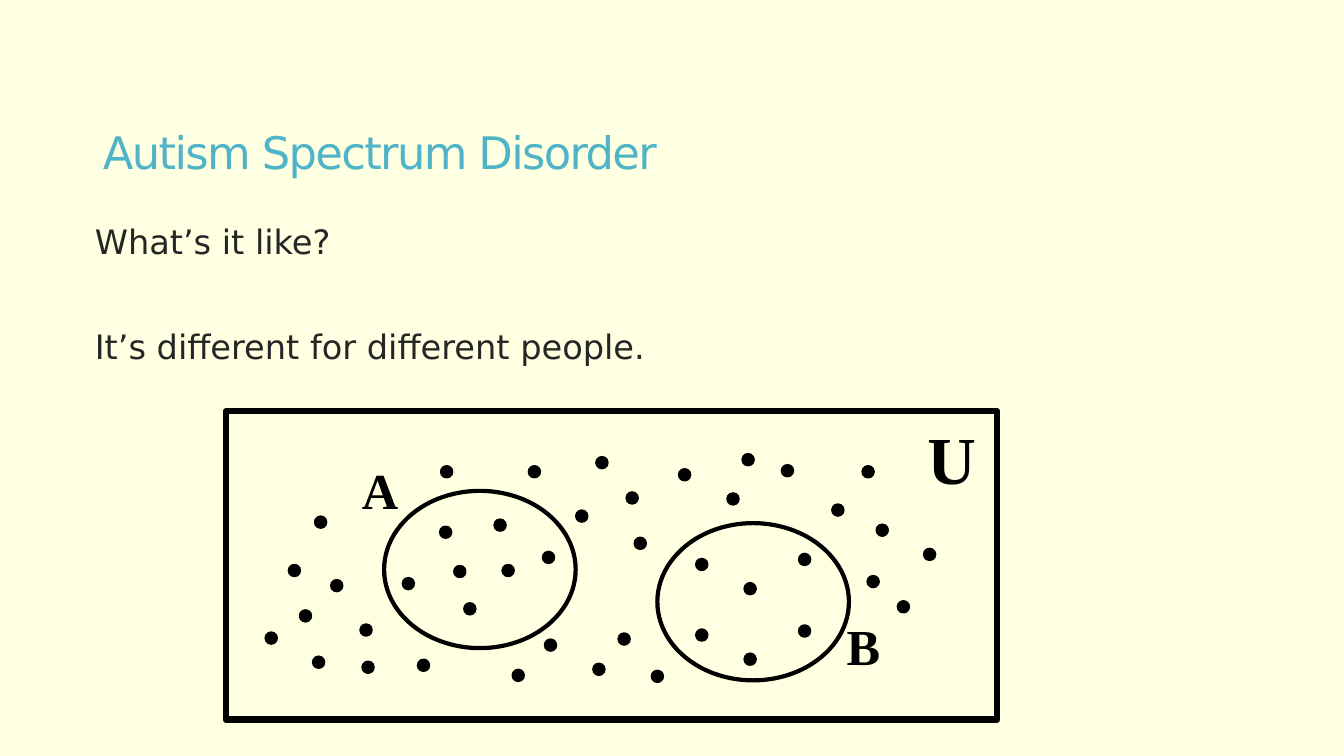
from pptx import Presentation
from pptx.dml.color import RGBColor
from pptx.enum.shapes import MSO_SHAPE as Preset
from pptx.enum.text import MSO_ANCHOR as Anchor, MSO_AUTO_SIZE as AutoSize, PP_ALIGN as Align
from pptx.util import Pt

PX = 9144  # 100 px to the inch
COLORS = {"page": "FFFFE1", "title": "50B4C8", "body": "262626", "ink": "000000"}
SANS, SERIF = "DejaVu Sans", "Times New Roman"
DOT = 12

# Diagram parts, measured from the top left corner of the universe
DOTS = {
    "A": [(266, 107), (236, 190), (226, 153), (274, 152), (314, 139), (175, 165), (212, 114)],
    "B": [(466, 146), (514, 170), (466, 216), (514, 240), (568, 212), (568, 141)],
    "U": [(213, 54), (104, 167), (190, 246), (449, 57), (497, 81), (300, 54), (347, 98),
          (645, 112), (692, 136), (636, 163), (666, 188), (284, 256), (316, 226), (364, 250),
          (133, 211), (88, 104), (512, 42), (397, 80), (389, 220), (405, 125), (551, 53),
          (601, 92), (422, 257), (631, 54), (367, 45), (39, 219), (86, 243), (135, 248),
          (73, 197), (62, 152)],
}
SETS = {"A": (157, 79, 190, 156), "B": (428, 111, 190, 156)}
LABELS = {"U": (686, 1, 69, 91, 48), "A": (125, 43, 57, 71, 36), "B": (606, 197, 54, 71, 36)}


def rgb(name):
    return RGBColor.from_string(COLORS[name])


def emu(box):
    return [length * PX for length in box]


def set_all(target, values):
    for name, value in values.items():
        setattr(target, name, value)


def place(placeholder, box):
    set_all(placeholder, dict(zip(("left", "top", "width", "height"), emu(box))))


def style_font(font, face, size, color, bold=False):
    set_all(font, {"name": face, "size": Pt(size), "bold": bold})
    font.color.rgb = rgb(color)


def add_title(slide, box, wording):
    title = slide.shapes.title
    place(title, box)
    set_all(title.text_frame, {"text": wording, "vertical_anchor": Anchor.MIDDLE,
                               "auto_size": AutoSize.NONE})
    heading = title.text_frame.paragraphs[0]
    set_all(heading, {"alignment": Align.LEFT, "line_spacing": 0.85})
    style_font(heading.runs[0].font, SANS, 32, "title")
    heading.runs[0].font._element.set("spc", "-120")


def add_body(slide, box, lines):
    body = slide.placeholders[1]
    place(body, box)
    set_all(body.text_frame, {"text": "\n".join(wording for wording, _ in lines),
                              "auto_size": AutoSize.NONE})
    for line, (_, gap) in zip(body.text_frame.paragraphs, lines):
        set_all(line, {"line_spacing": 0.85, "space_before": Pt(gap)})
        style_font(line.runs[0].font, SANS, 24, "body")
        # Indented without a bullet
        props = line._p.get_or_add_pPr()
        set_all_xml = {"marL": str(10 * PX), "indent": "0"}
        for name, value in set_all_xml.items():
            props.set(name, value)
        props.append(props.makeelement(
            "{http://schemas.openxmlformats.org/drawingml/2006/main}buNone", {}))


def add_outline(slide, preset, box, weight, filled=False):
    outline = slide.shapes.add_shape(preset, *emu(box))
    outline.shadow.inherit = False
    outline.line.color.rgb = rgb("ink")
    outline.line.width = Pt(weight)
    if filled:
        outline.fill.solid()
        outline.fill.fore_color.rgb = rgb("ink")
    else:
        outline.fill.background()


def add_label(slide, box, letter, size):
    frame = slide.shapes.add_textbox(*emu(box)).text_frame
    set_all(frame, {"text": letter, "word_wrap": False, "auto_size": AutoSize.SHAPE_TO_FIT_TEXT})
    style_font(frame.paragraphs[0].runs[0].font, SERIF, size, "ink", bold=True)


def add_venn(slide, box):
    left, top = box[:2]
    # Universe and its two sets
    add_outline(slide, Preset.RECTANGLE, box, 4.5)
    for x, y, width, height in SETS.values():
        add_outline(slide, Preset.OVAL, (left + x, top + y, width, height), 3)
    # Members
    for members in DOTS.values():
        for x, y in members:
            add_outline(slide, Preset.OVAL, (left + x, top + y, DOT, DOT), 1, filled=True)
    # Set names
    for letter, (x, y, width, height, size) in LABELS.items():
        add_label(slide, (left + x, top + y, width, height), letter, size)


def main():
    deck = Presentation()
    set_all(deck, {"slide_width": 1333 * PX, "slide_height": 750 * PX})
    slide = deck.slides.add_slide(deck.slide_layouts[1])
    slide.background.fill.solid()
    slide.background.fill.fore_color.rgb = rgb("page")

    add_title(slide, (92, 84, 1167, 141), "Autism Spectrum Disorder")
    add_body(slide, (74, 220, 1176, 412),
             [("What’s it like?", 13), ("It’s different for different people.", 51)])
    add_venn(slide, (224, 408, 765, 306))
    deck.save("out.pptx")


if __name__ == "__main__":
    main()
